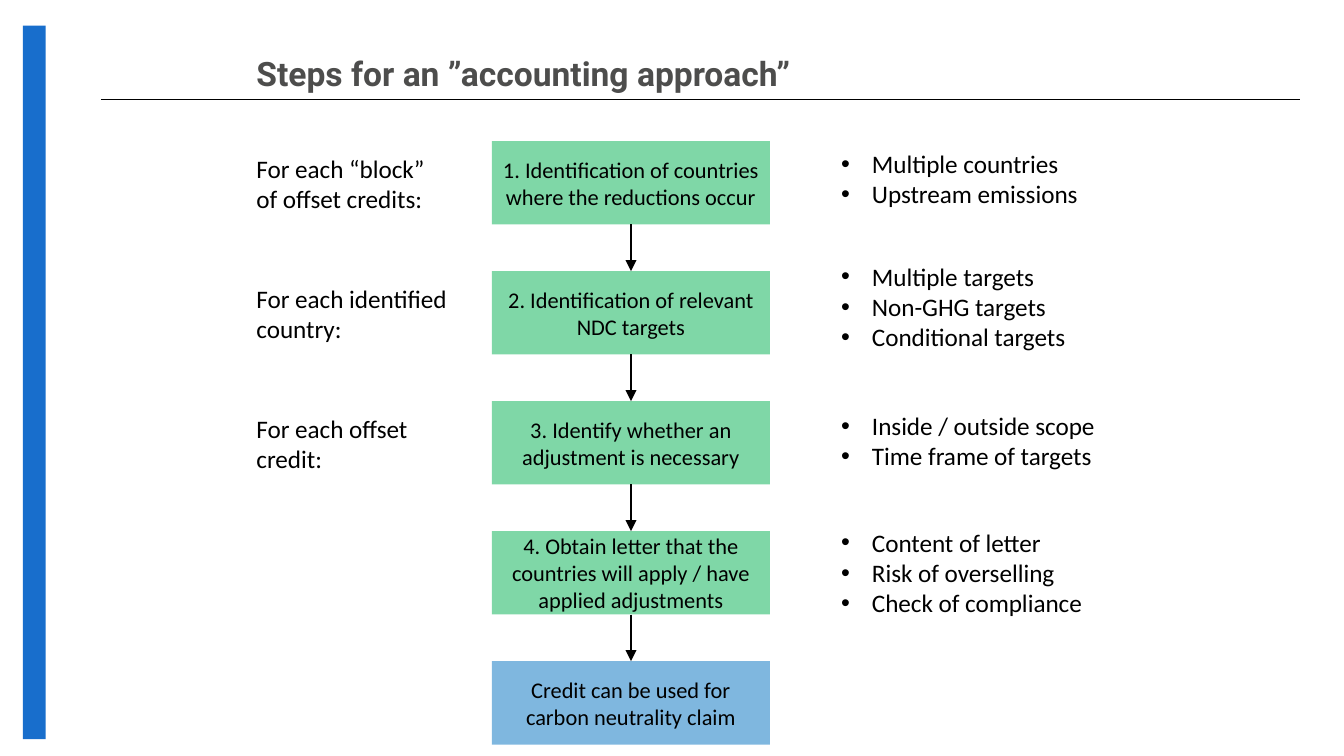
from itertools import pairwise

from lxml.etree import SubElement
from pptx import Presentation
from pptx.dml.color import RGBColor
from pptx.enum.shapes import MSO_CONNECTOR, MSO_SHAPE
from pptx.enum.text import MSO_ANCHOR, MSO_AUTO_SIZE, PP_ALIGN
from pptx.oxml.ns import qn
from pptx.util import Inches, Pt

COLORS = {
    "text": "000000",
    "title": "4D4D4C",
    "bar": "186ECC",
    "step": "00B050",
    "result": "0070C0",
}
SLIDE_WIDTH = Inches(10)
SLIDE_HEIGHT = SLIDE_WIDTH * 9 // 16
LABEL_LEFT, STEP_LEFT, NOTE_LEFT = 1.81, 3.66, 6.16
STEP_WIDTH, STEP_HEIGHT = 2.07, 0.62
FIRST_TOP, LAST_TOP = 1.05, 4.92
LINE_HEIGHT = 0.23

STEPS = [
    "1. Identification of countries where the reductions occur",
    "2. Identification of relevant NDC targets",
    "3. Identify whether an adjustment is necessary",
    "4. Obtain letter that the countries will apply / have applied adjustments",
    "Credit can be used for carbon neutrality claim",
]
LABELS = [
    ("For each “block” of offset credits:", 1.59),
    ("For each identified country:", 1.65),
    ("For each offset credit:", 1.65),
]
NOTES = [
    (1.33, ["Multiple countries", "Upstream emissions"]),
    (2.28, ["Multiple targets", "Non-GHG targets", "Conditional targets"]),
    (3.28, ["Inside / outside scope", "Time frame of targets"]),
    (4.26, ["Content of letter", "Risk of overselling", "Check of compliance"]),
]


def color(name):
    return RGBColor.from_string(COLORS[name])


def row_top(row):
    return FIRST_TOP + row * (LAST_TOP - FIRST_TOP) / (len(STEPS) - 1)


def style(paragraph, size, font="Calibri", color_name="text", bold=False):
    paragraph.font.name = font
    paragraph.font.size = Pt(size)
    paragraph.font.bold = bold
    paragraph.font.color.rgb = color(color_name)


def add_bullet(paragraph):
    properties = paragraph._p.get_or_add_pPr()
    properties.set("marL", str(Inches(0.23)))
    properties.set("indent", str(-Inches(0.23)))
    SubElement(properties, qn("a:buFont")).set("typeface", "Arial")
    SubElement(properties, qn("a:buChar")).set("char", "•")


def add_rectangle(slide, box, color_name, alpha=100):
    shape = slide.shapes.add_shape(MSO_SHAPE.RECTANGLE, *map(Inches, box))
    shape.shadow.inherit = False
    shape.line.fill.background()
    shape.fill.solid()
    shape.fill.fore_color.rgb = color(color_name)
    if alpha < 100:
        fill_color = shape._element.spPr.find(f".//{qn('a:srgbClr')}")
        SubElement(fill_color, qn("a:alpha")).set("val", str(alpha * 1000))
    return shape


def add_step(slide, row, text):
    color_name = "result" if row == len(STEPS) - 1 else "step"
    box = (STEP_LEFT, row_top(row), STEP_WIDTH, STEP_HEIGHT)
    shape = add_rectangle(slide, box, color_name, alpha=50)
    frame = shape.text_frame
    frame.word_wrap = True
    frame.vertical_anchor = MSO_ANCHOR.MIDDLE
    frame.margin_left = frame.margin_right = Inches(0.07)
    frame.margin_top = frame.margin_bottom = Inches(0.04)
    paragraph = frame.paragraphs[0]
    paragraph.text = text
    paragraph.alignment = PP_ALIGN.CENTER
    style(paragraph, 12)
    return shape


def add_line(slide, start, end, width):
    points = map(Inches, (*start, *end))
    connector = slide.shapes.add_connector(MSO_CONNECTOR.STRAIGHT, *points)
    connector.line.color.rgb = color("text")
    connector.line.width = Pt(width)
    SubElement(connector._element.spPr, qn("a:effectLst"))
    return connector


def add_arrow(slide, upper, lower):
    connector = add_line(slide, (0, 0), (0, 0), 1.5)
    connector.begin_connect(upper, 2)
    connector.end_connect(lower, 0)
    line = connector.line._get_or_add_ln()
    SubElement(line, qn("a:tailEnd")).set("type", "triangle")


def add_text(slide, box, lines, anchor=MSO_ANCHOR.TOP, bullets=False):
    frame = slide.shapes.add_textbox(*map(Inches, box)).text_frame
    frame.word_wrap = True
    frame.auto_size = MSO_AUTO_SIZE.SHAPE_TO_FIT_TEXT
    frame.vertical_anchor = anchor
    for index, line in enumerate(lines):
        paragraph = frame.add_paragraph() if index else frame.paragraphs[0]
        paragraph.text = line
        if bullets:
            add_bullet(paragraph)
        style(paragraph, 13.5)
    return frame


def add_title(slide, text):
    box = (LABEL_LEFT, 0.33, 6.85, 0.42)
    frame = add_text(slide, box, [text], MSO_ANCHOR.MIDDLE)
    frame.auto_size = MSO_AUTO_SIZE.NONE
    style(frame.paragraphs[0], 18, "Roboto", "title", True)


def main():
    presentation = Presentation()
    presentation.slide_width = SLIDE_WIDTH
    presentation.slide_height = SLIDE_HEIGHT
    slide = presentation.slides.add_slide(presentation.slide_layouts[6])

    add_line(slide, (0.75, 0.74), (9.67, 0.74), 0.75)
    add_rectangle(slide, (0.17, 0.19, 0.17, 5.31), "bar")
    add_title(slide, "Steps for an ”accounting approach”")

    steps = [add_step(slide, row, text) for row, text in enumerate(STEPS)]
    for upper, lower in pairwise(steps):
        add_arrow(slide, upper, lower)
    for row, (text, width) in enumerate(LABELS):
        add_text(slide, (LABEL_LEFT, row_top(row) + 0.04, width, 0.56), [text])
    for center, lines in NOTES:
        height = 0.1 + len(lines) * LINE_HEIGHT
        box = (NOTE_LEFT, center - height / 2, 2.57, height)
        add_text(slide, box, lines, MSO_ANCHOR.MIDDLE, bullets=True)

    presentation.save("out.pptx")


if __name__ == "__main__":
    main()
